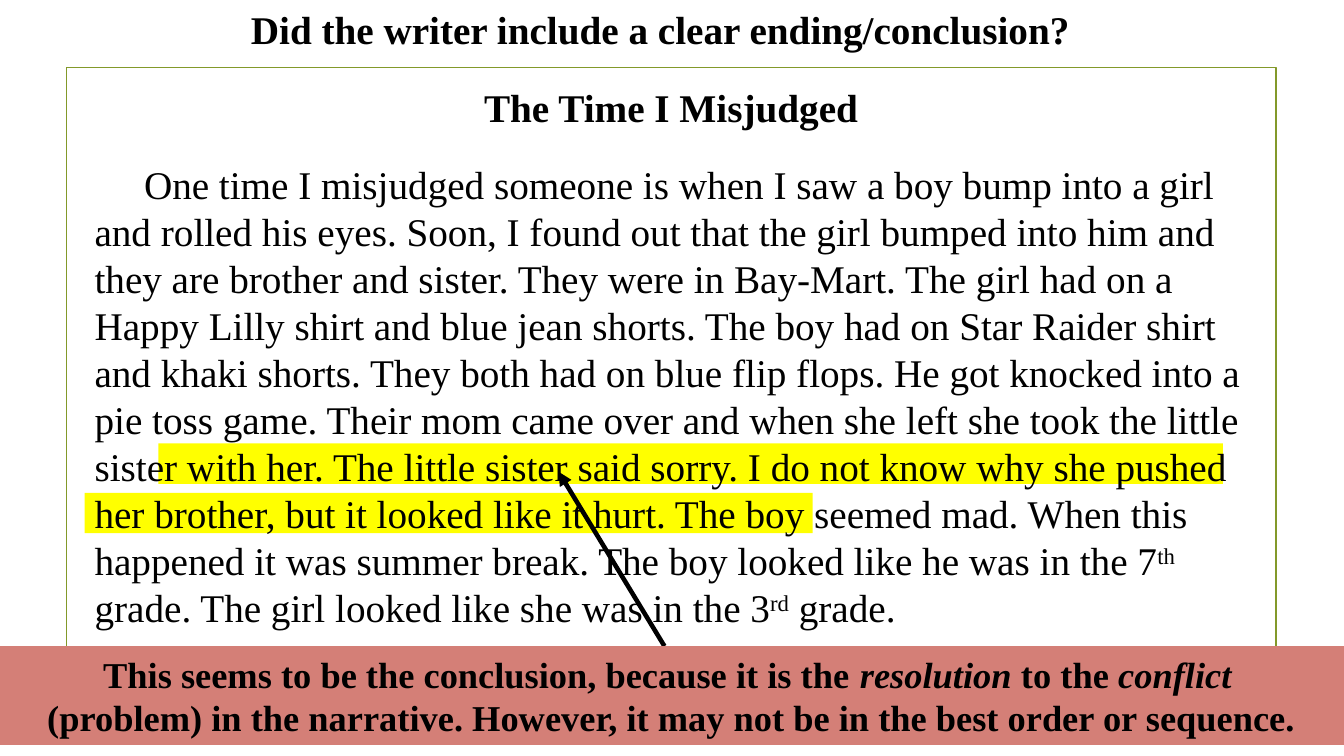
import pptx
import pptx.dml.color
import pptx.enum.shapes
import pptx.enum.text
import pptx.util
from dataclasses import dataclass
from lxml import etree
from pptx.util import Inches


@dataclass(frozen=True)
class Theme:
    font: str = "Times New Roman"
    ink: str = "000000"
    frame: str = "83992A"
    marker: str = "FFFF00"
    band: str = "D47F77"
    story_size: int = 28
    verdict_size: int = 26
    line_spacing: float = 1.0


THEME = Theme()
CENTER = pptx.enum.text.PP_ALIGN.CENTER
LEFT = pptx.enum.text.PP_ALIGN.LEFT
DRAWING = "http://schemas.openxmlformats.org/drawingml/2006/main"

STORY = [
    ("One time I misjudged someone is when I saw a boy bump into a girl and rolled his eyes. "
     "Soon, I found out that the girl bumped into him and they are brother and sister. "
     "They were in Bay-Mart. The girl had on a Happy Lilly shirt and blue jean shorts. "
     "The boy had on Star Raider shirt and khaki shorts. They both had on blue flip flops. "
     "He got knocked into a pie toss game. Their mom came over and when she left she took "
     "the little sister with her. The little sister said sorry. I do not know why she pushed "
     "her brother, but it looked like it hurt. The boy seemed mad. When this happened it was "
     "summer break. The boy looked like he was in the 7", {}),
    ("th", {"raised": True}),
    (" grade. The girl looked like she was in the 3", {}),
    ("rd", {"raised": True}),
    (" grade.", {}),
]
VERDICT = [
    [("This seems to be the conclusion, because it is the ", {}),
     ("resolution", {"italic": True}),
     (" to the ", {}),
     ("conflict ", {"italic": True})],
    [("(problem) in the narrative. However, it may not be in the best order or sequence.", {})],
]


def rgb(code):
    return pptx.dml.color.RGBColor.from_string(code)


def write(para, spans, size, bold=False, align=LEFT, before=0, indent=0):
    """Fill a paragraph from a string or a list of (text, format) spans."""
    para.alignment = align
    para.line_spacing = THEME.line_spacing
    para.space_before = pptx.util.Pt(before)
    if indent:
        para._p.get_or_add_pPr().set("indent", str(Inches(indent)))
    for text, style in [(spans, {})] if isinstance(spans, str) else spans:
        span = para.add_run()
        span.text = text
        span.font.name = THEME.font
        span.font.size = pptx.util.Pt(size)
        span.font.bold = bold
        span.font.italic = style.get("italic", False)
        span.font.color.rgb = rgb(THEME.ink)
        if style.get("raised"):
            span.font._element.set("baseline", "30000")


def add_panel(page, left, top, width, height, fill=None, line=None):
    panel = page.shapes.add_shape(
        pptx.enum.shapes.MSO_SHAPE.RECTANGLE,
        Inches(left), Inches(top), Inches(width), Inches(height))
    panel.shadow.inherit = False
    if fill:
        panel.fill.solid()
        panel.fill.fore_color.rgb = rgb(fill)
    else:
        panel.fill.background()
    if line:
        panel.line.color.rgb = rgb(line)
        panel.line.width = pptx.util.Pt(1.25)
    else:
        panel.line.fill.background()
    return panel


def add_text_frame(page, left, top, width, height):
    box = page.shapes.add_textbox(Inches(left), Inches(top), Inches(width), Inches(height))
    box.text_frame.word_wrap = True
    return box.text_frame


def add_question(page, left, top, width, height):
    frame = add_text_frame(page, left, top, width, height)
    write(frame.paragraphs[0], "Did the writer include a clear ending/conclusion?",
          THEME.story_size, bold=True)


def add_story(page, left, top, width, height):
    """Place the highlighter strips and the story over them."""
    for dx, dy, strip_width in ((0, 4.11, 7.22), (0.73, 3.62, 10.56)):
        add_panel(page, left + dx, top + dy, strip_width, 0.4, fill=THEME.marker)
    frame = add_text_frame(page, left, top, width, height)
    write(frame.paragraphs[0], "The Time I Misjudged", THEME.story_size, bold=True, align=CENTER)
    write(frame.add_paragraph(), STORY, THEME.story_size, before=21, indent=0.49)


def add_verdict(page, left, top, width, height):
    """Place the verdict band and its arrow up to the highlighted sentence."""
    arrow = page.shapes.add_connector(
        pptx.enum.shapes.MSO_CONNECTOR.STRAIGHT,
        Inches(left + 6.59), Inches(top), Inches(left + 5.54), Inches(top - 1.73))
    arrow.line.color.rgb = rgb(THEME.ink)
    arrow.line.width = pptx.util.Pt(3.25)
    etree.SubElement(arrow.line._get_or_add_ln(), f"{{{DRAWING}}}tailEnd", type="triangle")
    etree.SubElement(arrow._element.spPr, f"{{{DRAWING}}}effectLst")

    frame = add_panel(page, left, top, width, height, fill=THEME.band).text_frame
    frame.word_wrap = True
    frame.vertical_anchor = pptx.enum.text.MSO_ANCHOR.MIDDLE
    for index, spans in enumerate(VERDICT):
        para = frame.add_paragraph() if index else frame.paragraphs[0]
        write(para, spans, THEME.verdict_size, bold=True, align=CENTER)


def main():
    deck = pptx.Presentation()
    deck.slide_width, deck.slide_height = Inches(13.33), Inches(7.5)
    page = deck.slides.add_slide(deck.slide_layouts[6])
    add_panel(page, 0.66, 0.67, 12, 6.17, line=THEME.frame)
    add_question(page, 2.39, 0, 8.54, 0.57)
    add_story(page, 0.84, 0.78, 11.63, 5.59)
    add_verdict(page, 0, 6.41, 13.33, 0.98)
    deck.save("out.pptx")


if __name__ == "__main__":
    main()
